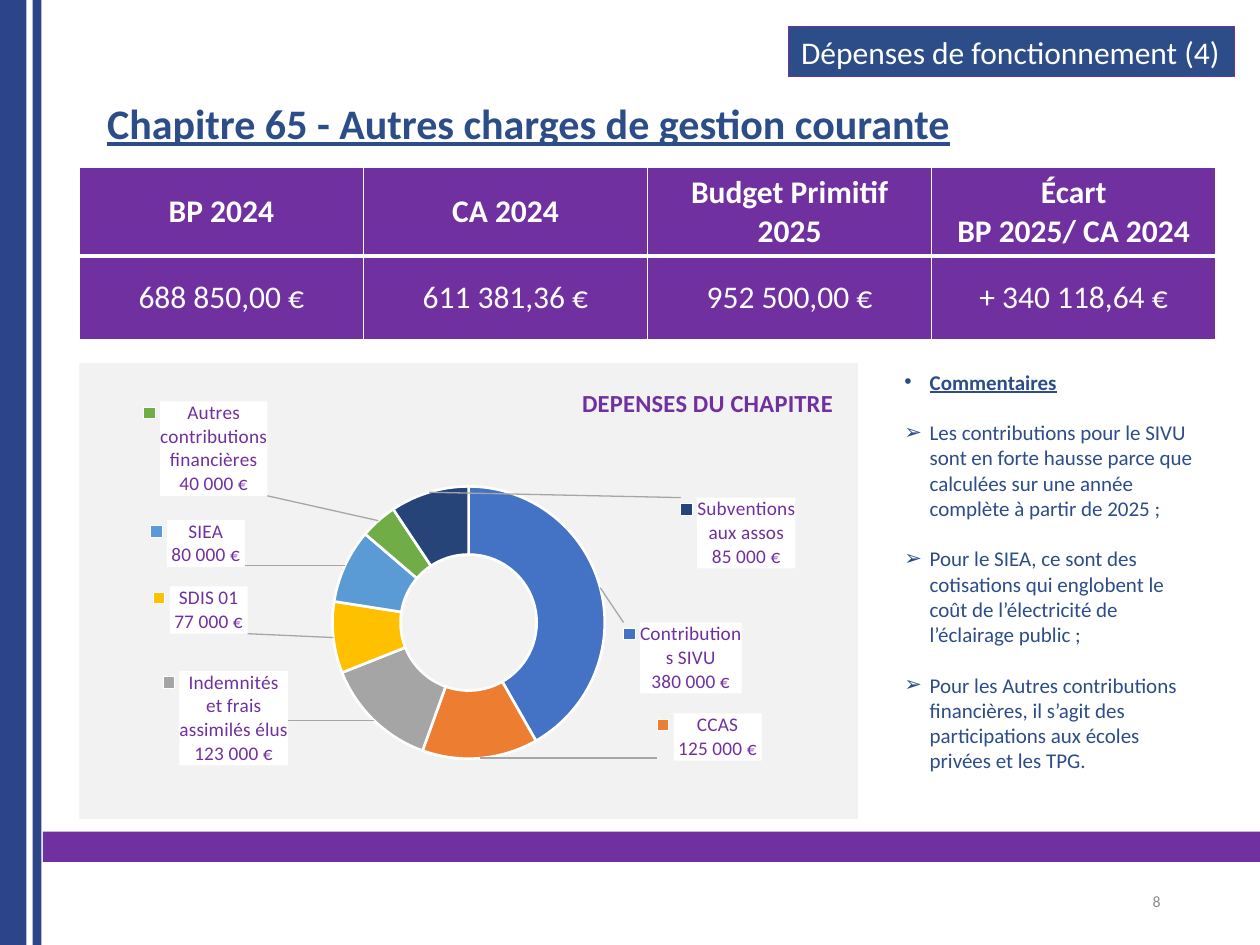
from dataclasses import dataclass
from math import cos, pi, sin

from lxml.etree import SubElement
from pptx import Presentation
from pptx.chart.data import CategoryChartData
from pptx.dml.color import RGBColor
from pptx.enum.chart import XL_CHART_TYPE
from pptx.enum.shapes import MSO_SHAPE
from pptx.enum.text import MSO_ANCHOR, MSO_AUTO_SIZE, PP_ALIGN
from pptx.oxml import parse_xml
from pptx.oxml.ns import nsdecls, qn
from pptx.util import Inches, Pt


@dataclass(frozen=True)
class Theme:
    font: str = "Calibri"
    purple: str = "7030A0"
    bar: str = "2C4588"
    blue: str = "2C4D88"
    white: str = "FFFFFF"
    panel: str = "F2F2F2"
    grey: str = "8C8C8C"
    leader: str = "A6A6A6"
    heading: float = 24
    large: float = 18
    chart_title: float = 14
    body: float = 12
    label: float = 11
    small: float = 9


THEME = Theme()
CHART_BOX = (0.63, 2.88, 6.18, 3.62)
RING_CENTER = (3.72, 4.94)
RING_RADIUS = 1.08
EXPENSES = [
    ("Contributions SIVU", 380000, "4472C4", (5.42, 5.22)),
    ("CCAS", 125000, "ED7D31", (5.63, 5.85)),
    ("Indemnités et frais assimilés élus", 123000, "A5A5A5", (1.79, 5.70)),
    ("SDIS 01", 77000, "FFC000", (1.59, 4.84)),
    ("SIEA", 80000, "5B9BD5", (1.57, 4.31)),
    ("Autres contributions financières", 40000, "70AD47", (1.63, 3.56)),
    ("Subventions aux assos", 85000, "264478", (5.86, 4.23)),
]
BUDGET = [
    ["BP 2024", "CA 2024", "Budget Primitif 2025", "Écart\nBP 2025/ CA 2024"],
    ["688 850,00 €", "611 381,36 €", "952 500,00 €", "+ 340 118,64 €"],
]
COMMENTS = [
    "Les contributions pour le SIVU sont en forte hausse parce que calculées sur une année complète à partir de 2025 ;",
    "Pour le SIEA, ce sont des cotisations qui englobent le coût de l’électricité de l’éclairage public ;",
    "Pour les Autres contributions financières, il s’agit des participations aux écoles privées et les TPG.",
]
EURO_FORMAT = r'_-* #\ ##0\ "€"_-;\-* #\ ##0\ "€"_-;_-* '


def rgb(color):
    return RGBColor.from_string(color)


def add_span(para, text, size, color, bold=False, underline=False):
    span = para.add_run()
    span.text = text
    font = span.font
    font.name, font.size, font.color.rgb = THEME.font, Pt(size), rgb(color)
    font.bold, font.underline = bold, underline


def add_bar(page, box, color, line=None):
    bar = page.shapes.add_shape(MSO_SHAPE.RECTANGLE, *map(Inches, box))
    bar.shadow.inherit = False
    bar.fill.solid()
    bar.fill.fore_color.rgb = rgb(color)
    if line:
        bar.line.color.rgb = rgb(line)
        bar.line.width = Pt(0.75)
    else:
        bar.line.fill.background()
    return bar


def add_heading(page, text):
    title = page.shapes.title
    title.left, title.top, title.width, title.height = map(Inches, (0.63, 0.77, 9.02, 0.55))
    frame = title.text_frame
    frame.auto_size = MSO_AUTO_SIZE.NONE
    frame.vertical_anchor = MSO_ANCHOR.TOP
    frame.margin_left = Inches(0.22)
    para = frame.paragraphs[0]
    para.alignment = PP_ALIGN.LEFT
    para.line_spacing = 0.9
    add_span(para, text, THEME.heading, THEME.blue, True, True)


def add_tag(page, text):
    frame = add_bar(page, (6.26, 0.21, 3.54, 0.4), THEME.blue, THEME.purple).text_frame
    frame.vertical_anchor = MSO_ANCHOR.TOP
    para = frame.paragraphs[0]
    para.alignment = PP_ALIGN.LEFT
    add_span(para, text, THEME.large, THEME.white)


def set_borders(cell, **widths):
    properties = cell._tc.get_or_add_tcPr()
    for index, side in enumerate(("L", "R", "T", "B")):
        line = parse_xml(
            f'<a:ln{side} {nsdecls("a")} w="{Pt(widths.get(side, 1))}"><a:solidFill>'
            f'<a:srgbClr val="{THEME.white}"/></a:solidFill></a:ln{side}>')
        properties.insert(index, line)


def add_budget_table(page):
    shape = page.shapes.add_table(2, 4, *map(Inches, (0.63, 1.33, 9.02, 1.37)))
    table = shape.table
    for row, height in zip(table.rows, (0.7, 0.67)):
        row.height = Inches(height)
    for row, texts in enumerate(BUDGET):
        for column, text in enumerate(texts):
            cell = table.cell(row, column)
            cell.fill.solid()
            cell.fill.fore_color.rgb = rgb(THEME.purple)
            cell.vertical_anchor = MSO_ANCHOR.MIDDLE
            frame = cell.text_frame
            for index, line in enumerate(text.split("\n")):
                para = frame.add_paragraph() if index else frame.paragraphs[0]
                para.alignment = PP_ALIGN.CENTER
                add_span(para, line, THEME.large, THEME.white, row == 0)
            set_borders(cell, **({"T": 3} if row else {"B": 3}))


def layout_xml(x, y, size=None):
    modes, extent = "", ""
    if size:
        modes = '<c:layoutTarget val="inner"/>'
        extent = f'<c:w val="{size[0]:.3f}"/><c:h val="{size[1]:.3f}"/>'
    if size is not None:
        modes += '<c:xMode val="edge"/><c:yMode val="edge"/>'
    return (f'<c:layout {nsdecls("c")}><c:manualLayout>{modes}<c:x val="{x:.3f}"/>'
            f'<c:y val="{y:.3f}"/>{extent}</c:manualLayout></c:layout>')


def label_offsets():
    total = sum(expense[1] for expense in EXPENSES)
    middle_radius = RING_RADIUS * 0.75
    passed = 0
    for _, value, _, target in EXPENSES:
        angle = 2 * pi * (passed + value / 2) / total
        passed += value
        x = RING_CENTER[0] + middle_radius * sin(angle)
        y = RING_CENTER[1] - middle_radius * cos(angle)
        yield (target[0] - x) / CHART_BOX[2], (target[1] - y) / CHART_BOX[3]


def data_labels():
    number_format = EURO_FORMAT.replace('"', "&quot;")
    style = (
        f'<c:numFmt formatCode="{number_format}" sourceLinked="0"/>'
        f'<c:spPr><a:solidFill><a:srgbClr val="{THEME.white}"/></a:solidFill></c:spPr>'
        f'<c:txPr><a:bodyPr/><a:p><a:pPr><a:defRPr sz="{int(THEME.label * 100)}" b="0"><a:solidFill>'
        f'<a:srgbClr val="{THEME.purple}"/></a:solidFill><a:latin typeface="{THEME.font}"/>'
        '</a:defRPr></a:pPr><a:endParaRPr lang="fr-FR"/></a:p></c:txPr>'
        '<c:showLegendKey val="1"/><c:showVal val="1"/><c:showCatName val="1"/>'
        '<c:showSerName val="0"/><c:showPercent val="0"/><c:showBubbleSize val="0"/>'
        '<c:separator>\n</c:separator>')
    labels = "".join(
        f'<c:dLbl><c:idx val="{index}"/>{layout_xml(*offset)}{style}</c:dLbl>'
        for index, offset in enumerate(label_offsets()))
    leader = (f'<c:showLeaderLines val="1"/><c:leaderLines><c:spPr><a:ln w="9525"><a:solidFill>'
              f'<a:srgbClr val="{THEME.leader}"/></a:solidFill></a:ln></c:spPr></c:leaderLines>')
    return parse_xml(f'<c:dLbls {nsdecls("c", "a")}>{labels}{style}{leader}</c:dLbls>')


def add_expense_chart(page):
    data = CategoryChartData()
    data.categories = [expense[0] for expense in EXPENSES]
    data.add_series("Series 1", [expense[1] for expense in EXPENSES])
    left, top, width, height = CHART_BOX
    chart = page.shapes.add_chart(XL_CHART_TYPE.DOUGHNUT, *map(Inches, CHART_BOX), data).chart
    chart.has_legend = False
    chart.font.name, chart.font.size = THEME.font, Pt(10)
    chart.font.color.rgb = rgb("000000")
    chart.has_title = True
    title = chart.chart_title
    add_span(title.text_frame.paragraphs[0], "DEPENSES DU CHAPITRE",
             THEME.chart_title, THEME.purple, True)
    for old in title._element.findall(qn("c:layout")):
        title._element.remove(old)
    title._element.find(qn("c:tx")).addnext(parse_xml(layout_xml(0.64, 0.04, ())))
    plot = chart.plots[0]
    plot.vary_by_categories = True
    plot._element.find(qn("c:holeSize")).set("val", "75")
    for old in plot._element.findall(qn("c:dLbls")):
        plot._element.remove(old)
    series = plot.series[0]
    for index, expense in enumerate(EXPENSES):
        style = series.points[index].format
        style.fill.solid()
        style.fill.fore_color.rgb = rgb(expense[2])
        style.line.color.rgb = rgb(THEME.white)
        style.line.width = Pt(1.5)
    series._element.find(qn("c:cat")).addprevious(data_labels())
    area = plot._element.getparent()
    for old in area.findall(qn("c:layout")):
        area.remove(old)
    area.insert(0, parse_xml(layout_xml(
        (RING_CENTER[0] - RING_RADIUS - left) / width, (RING_CENTER[1] - RING_RADIUS - top) / height,
        (2 * RING_RADIUS / width, 2 * RING_RADIUS / height))))
    area.getparent().addnext(parse_xml(
        f'<c:spPr {nsdecls("c", "a")}><a:solidFill><a:srgbClr val="{THEME.panel}"/></a:solidFill>'
        '<a:ln><a:noFill/></a:ln></c:spPr>'))


def add_comments(page):
    frame = page.shapes.add_textbox(*map(Inches, (6.97, 2.88, 2.69, 3.33))).text_frame
    frame.word_wrap = True
    for index, text in enumerate(["Commentaires", *COMMENTS]):
        first = index == 0
        para = frame.paragraphs[0] if first else frame.add_paragraph()
        properties = para._p.get_or_add_pPr()
        properties.set("marL", str(Inches(0.31)))
        properties.set("indent", str(Inches(-0.2)))
        SubElement(properties, qn("a:buFont"), typeface="Arial")
        SubElement(properties, qn("a:buChar"), char="•" if first else "➢")
        if not first:
            para.space_before = Pt(14.5)
        add_span(para, text, THEME.body, THEME.blue, first, first)


def add_page_number(page, number):
    frame = page.shapes.add_textbox(*map(Inches, (7.06, 6.95, 2.25, 0.4))).text_frame
    frame.word_wrap = True
    frame.vertical_anchor = MSO_ANCHOR.MIDDLE
    para = frame.paragraphs[0]
    para.alignment = PP_ALIGN.RIGHT
    add_span(para, number, THEME.small, THEME.grey)


def main():
    deck = Presentation()
    deck.slide_width, deck.slide_height = Inches(10), Inches(7.5)
    page = deck.slides.add_slide(deck.slide_layouts[5])
    add_bar(page, (0.34, 6.6, 9.66, 0.24), THEME.purple)
    add_bar(page, (0, 0, 0.21, 7.5), THEME.bar)
    add_bar(page, (0.26, 0, 0.07, 7.5), THEME.bar)
    add_heading(page, "Chapitre 65 - Autres charges de gestion courante")
    add_page_number(page, "8")
    add_tag(page, "Dépenses de fonctionnement (4)")
    add_budget_table(page)
    add_expense_chart(page)
    add_comments(page)
    deck.save("out.pptx")


if __name__ == "__main__":
    main()
